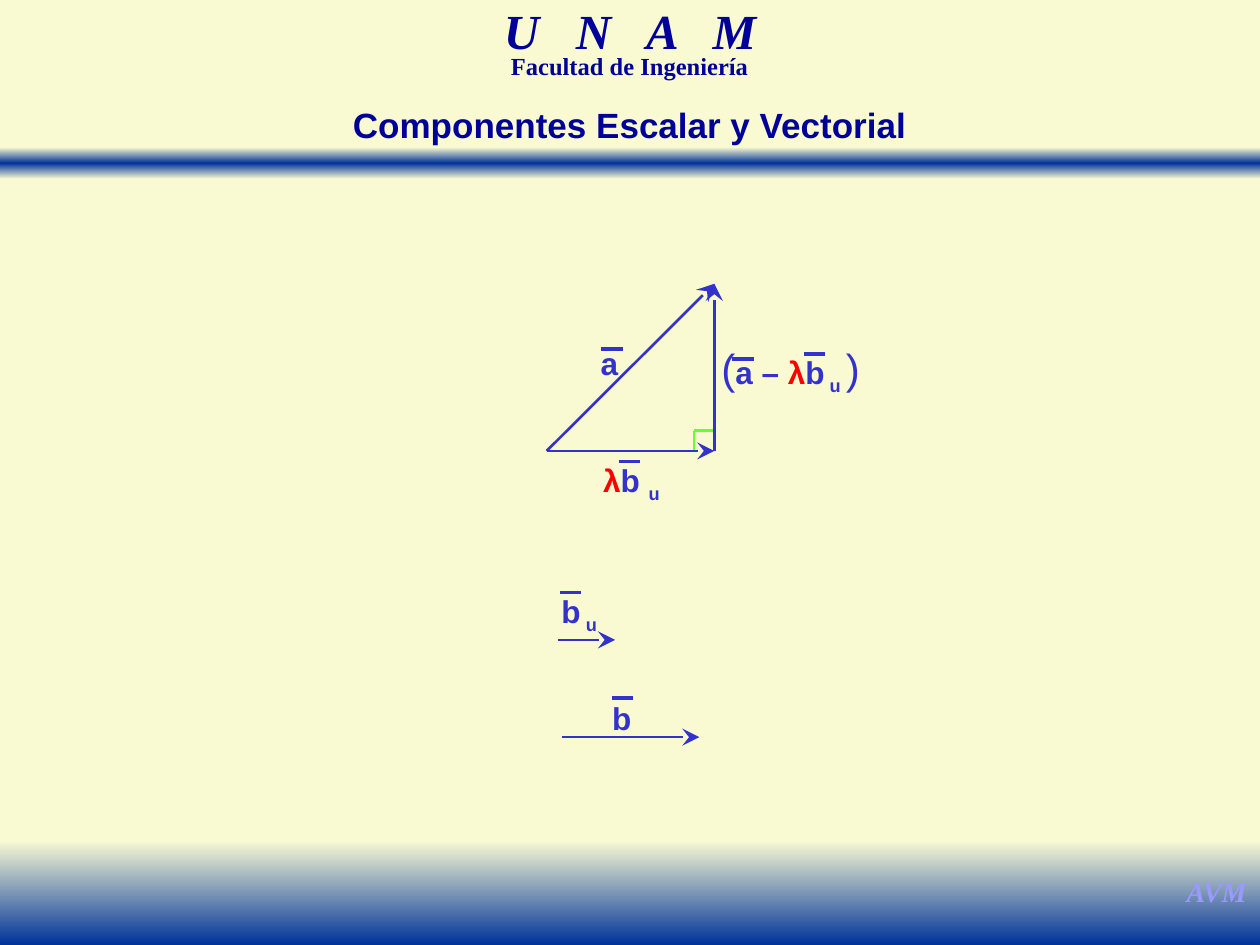
from copy import deepcopy
from lxml.etree import SubElement
from pptx import Presentation
from pptx.dml.color import RGBColor
from pptx.enum.shapes import MSO_CONNECTOR, MSO_SHAPE
from pptx.enum.text import MSO_ANCHOR, MSO_AUTO_SIZE, PP_ALIGN
from pptx.oxml.ns import qn
from pptx.util import Cm, Pt

THEME = {
    "cream": "FAFAD2", "deep": "003399", "navy": "000099", "lilac": "9999FF",
    "vector": "3333CC", "scalar": "FF0000", "mark": "66FF33",
    "serif": "Times New Roman", "sans": "Arial",
    "banner": 28, "faculty": 14, "signature": 16, "title": 20, "label": 18, "bracket": 24,
    "arrow_width": 1.5, "bar_width": 2,
}
WIDTH, HEIGHT = 25.4, 19.05

# Run formats
SERIF = {"name": THEME["serif"], "bold": True, "color": THEME["navy"]}
BANNER = {**SERIF, "size": THEME["banner"], "italic": True}
FACULTY = {**SERIF, "size": THEME["faculty"]}
SIGNATURE = {**SERIF, "size": THEME["signature"], "italic": True, "color": THEME["lilac"]}
TITLE = {"name": THEME["sans"], "size": THEME["title"], "bold": True,
         "italic": False, "color": THEME["navy"]}
VECTOR = {**TITLE, "size": THEME["label"], "color": THEME["vector"]}
SCALAR = {**VECTOR, "color": THEME["scalar"]}
SUBSCRIPT = {**VECTOR, "baseline": -25000}
BRACKET = {**VECTOR, "size": THEME["bracket"], "bold": False}

# Content, lengths in centimetres
GRADIENTS = [  # top, height, colours from top to bottom
    (2.97, 0.64, ("cream", "deep", "cream")),
    (16.94, 2.11, ("cream", "deep")),
]
HEADINGS = [  # box, wrap, line spacing, runs
    ((7.72, 0.2, 9.96, 1.09), True, 0.7, [("U   N   A   M", BANNER)]),
    ((8.15, 1.07, 9.09, 0.66), True, 0.7, [("Facultad de Ingeniería", FACULTY)]),
    ((23.65, 17.5, 1.75, 0.94), False, 1.0, [("AVM", SIGNATURE)]),
]
TITLE_BOX = (6.86, 1.96, 11.68, 1.09)
TITLE_RUNS = [("Componentes Escalar y Vectorial", TITLE)]
LABELS = [  # box, alignment, runs, starts of the vector bars
    ((11.86, 6.81, 1.04, 1.02), PP_ALIGN.LEFT, [("a ", VECTOR)], [(12.12, 7.04)]),
    ((12.09, 13.97, 1.07, 1.02), PP_ALIGN.LEFT, [("b ", VECTOR)], [(12.34, 14.07)]),
    ((11.07, 11.81, 1.45, 1.02), PP_ALIGN.LEFT,
     [("b", VECTOR), (" u ", SUBSCRIPT)], [(11.28, 11.94)]),
    ((11.91, 9.17, 1.8, 1.02), PP_ALIGN.LEFT,
     [("λ", SCALAR), ("b ", VECTOR), ("u ", SUBSCRIPT)], [(12.47, 9.3)]),
    ((14.25, 6.78, 3.38, 1.27), PP_ALIGN.CENTER,
     [("(", BRACKET), ("a – ", VECTOR), ("λ", SCALAR), ("b", VECTOR),
      (" u ", SUBSCRIPT), (")", BRACKET)], [(16.21, 7.14), (14.76, 7.24)]),
]
ORIGIN, CORNER, APEX = (11.02, 9.09), (14.4, 9.09), (14.4, 5.72)
ARROWS = [
    (ORIGIN, APEX), (ORIGIN, CORNER), (CORNER, APEX),
    ((11.25, 12.9), (12.4, 12.9)), ((11.33, 14.86), (14.1, 14.86)),
]
MARK_SIDE, BAR_LENGTH = 0.41, 0.43


def cm(values):
    return [Cm(value) for value in values]


def write(shape, runs, align, wrap=False, spacing=1.0):
    frame = shape.text_frame
    settings = {"word_wrap": wrap, "auto_size": MSO_AUTO_SIZE.SHAPE_TO_FIT_TEXT,
                "vertical_anchor": MSO_ANCHOR.TOP}
    for name, value in settings.items():
        setattr(frame, name, value)
    paragraph = frame.paragraphs[0]
    paragraph.alignment, paragraph.line_spacing = align, spacing
    for text, style in runs:
        run = paragraph.add_run()
        run.text = text
        for name, value in style.items():
            if name == "color":
                run.font.color.rgb = RGBColor.from_string(value)
            elif name == "baseline":
                run.font._element.set("baseline", str(value))
            else:
                setattr(run.font, name, Pt(value) if name == "size" else value)


def add_gradient(slide, top, height, colors):
    shape = slide.shapes.add_shape(MSO_SHAPE.RECTANGLE, *cm((0, top, WIDTH, height)))
    shape.shadow.inherit = False
    shape.line.fill.background()
    shape.fill.gradient()
    shape.fill.gradient_angle = 270
    stop_list = shape._element.spPr.find(".//" + qn("a:gsLst"))
    while len(stop_list) < len(colors):
        stop_list.append(deepcopy(stop_list[0]))
    for index, (stop, color) in enumerate(zip(shape.fill.gradient_stops, colors)):
        stop.position = index / (len(colors) - 1)
        stop.color.rgb = RGBColor.from_string(THEME[color])


def add_line(slide, start, end, color="vector", width="arrow_width", arrow=False):
    line = slide.shapes.add_connector(MSO_CONNECTOR.STRAIGHT, *cm((*start, *end)))
    line.line.color.rgb = RGBColor.from_string(THEME[color])
    line.line.width = Pt(THEME[width])
    if arrow:
        SubElement(line.line._get_or_add_ln(), qn("a:tailEnd"), type="stealth", w="lg", len="lg")
    SubElement(line._element.spPr, qn("a:effectLst"))


def main():
    presentation = Presentation()
    presentation.slide_width, presentation.slide_height = cm((WIDTH, HEIGHT))
    slide = presentation.slides.add_slide(presentation.slide_layouts[5])
    slide.background.fill.solid()
    slide.background.fill.fore_color.rgb = RGBColor.from_string(THEME["cream"])

    # Bands, headings and title
    for gradient in GRADIENTS:
        add_gradient(slide, *gradient)
    for box, wrap, spacing, runs in HEADINGS:
        write(slide.shapes.add_textbox(*cm(box)), runs, PP_ALIGN.CENTER, wrap, spacing)
    title = slide.shapes.title
    title.left, title.top, title.width, title.height = cm(TITLE_BOX)
    write(title, TITLE_RUNS, PP_ALIGN.LEFT)

    # Right-angle mark
    x, y = CORNER
    inner = (x - MARK_SIDE, y - MARK_SIDE)
    for end in ((x, y - MARK_SIDE), (x - MARK_SIDE, y)):
        add_line(slide, inner, end, color="mark")

    # Vectors and their labels
    for start, end in ARROWS:
        add_line(slide, start, end, arrow=True)
    for box, align, runs, bars in LABELS:
        write(slide.shapes.add_textbox(*cm(box)), runs, align)
        for x, y in bars:
            add_line(slide, (x, y), (x + BAR_LENGTH, y), width="bar_width")

    presentation.save("out.pptx")


if __name__ == "__main__":
    main()
